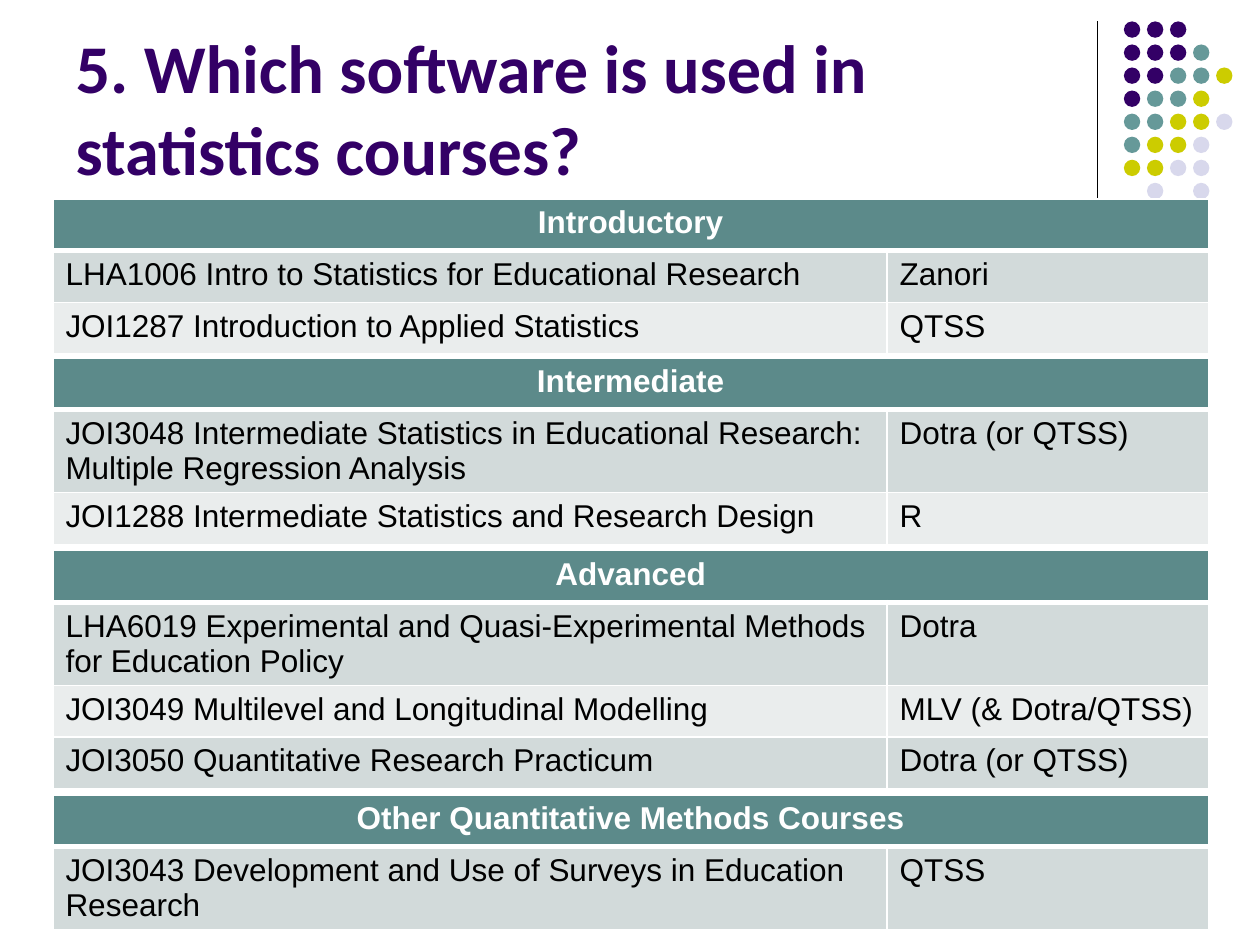
"""Build a slide listing the software used in each level of statistics course."""
from pptx import Presentation
from pptx import util as u
from pptx.dml.color import RGBColor
from pptx.enum import shapes, text
from pptx.oxml.ns import qn
from lxml import etree

COLOURS = {
    "purple": "330066", "teal": "669999", "lime": "CCCC00", "lilac": "D8D8EC",
    "header": "5C8A8A", "odd": "D2DADA", "even": "EAEDED",
    "black": "000000", "white": "FFFFFF",
}
DOT_CODES = {"P": "purple", "T": "teal", "L": "lime", "V": "lilac"}
DOT_ROWS = ["PPP", "PPPT", "PPTTL", "PTTL", "TTLLV", "TLLV", "LLVV", " V V"]
COURSE_LEVELS = [
    (1.58, 1.22, "Introductory", [
        ("LHA1006 Intro to Statistics for Educational Research", "Zanori"),
        ("JOI1287 Introduction to Applied Statistics", "QTSS"),
    ]),
    (2.84, 1.51, "Intermediate", [
        ("JOI3048 Intermediate Statistics in Educational Research: "
         "Multiple Regression Analysis", "Dotra (or QTSS)"),
        ("JOI1288 Intermediate Statistics and Research Design", "R"),
    ]),
    (4.37, 1.92, "Advanced", [
        ("LHA6019 Experimental and Quasi-Experimental Methods "
         "for Education Policy", "Dotra"),
        ("JOI3049 Multilevel and Longitudinal Modelling", "MLV (& Dotra/QTSS)"),
        ("JOI3050 Quantitative Research Practicum", "Dotra (or QTSS)"),
    ]),
    (6.31, 1.11, "Other Quantitative Methods Courses", [
        ("JOI3043 Development and Use of Surveys in Education Research", "QTSS"),
    ]),
]


def colour(name):
    return RGBColor.from_string(COLOURS[name])


class CourseSlide:
    """Hold the style and the slide being drawn."""

    def __init__(self, slide):
        self.slide = slide
        self.title_font, self.title_size = "Calibri", 39
        self.body_font, self.body_size = "Arial", 18
        self.columns, self.row_height = (6.62, 2.55), 0.41

    def style(self, paragraph, font, size, ink, bold):
        for run in paragraph.runs:
            run.font.name, run.font.size, run.font.bold = font, u.Pt(size), bold
            run.font.color.rgb = colour(ink)

    def title(self, wording, left, top, width, height):
        heading = self.slide.shapes.title
        heading.left, heading.top = u.Inches(left), u.Inches(top)
        heading.width, heading.height = u.Inches(width), u.Inches(height)
        frame = heading.text_frame
        frame.text = wording
        frame.word_wrap = True
        frame.auto_size = text.MSO_AUTO_SIZE.NONE
        frame.vertical_anchor = text.MSO_ANCHOR.BOTTOM
        paragraph = frame.paragraphs[0]
        paragraph.alignment = text.PP_ALIGN.LEFT
        paragraph.line_spacing = 1.0
        paragraph.space_before = u.Pt(0)
        self.style(paragraph, self.title_font, self.title_size, "purple", True)

    def rule(self, x, top, bottom):
        divider = self.slide.shapes.add_connector(
            shapes.MSO_CONNECTOR.STRAIGHT,
            u.Inches(x), u.Inches(top), u.Inches(x), u.Inches(bottom))
        divider.line.color.rgb = colour("black")
        divider.line.width = u.Pt(0.75)
        etree.SubElement(divider.element.spPr, qn("a:effectLst"))

    def dots(self, left, top, pitch, size):
        group = self.slide.shapes.add_group_shape()
        for row, codes in enumerate(DOT_ROWS):
            for column, code in enumerate(codes):
                if code in DOT_CODES:
                    dot = group.shapes.add_shape(
                        shapes.MSO_SHAPE.OVAL,
                        u.Inches(left + column * pitch), u.Inches(top + row * pitch),
                        u.Inches(size), u.Inches(size))
                    dot.shadow.inherit = False
                    dot.fill.solid()
                    dot.fill.fore_color.rgb = colour(DOT_CODES[code])
                    dot.line.fill.background()

    def borders(self, cell, top, bottom):
        properties = cell._tc.get_or_add_tcPr()
        for side, width in (("L", 1), ("R", 1), ("T", top), ("B", bottom)):
            edge = etree.SubElement(properties, qn(f"a:ln{side}"), w=str(u.Pt(width)))
            fill = etree.SubElement(edge, qn("a:solidFill"))
            etree.SubElement(fill, qn("a:srgbClr"), val=COLOURS["white"])

    def cell(self, cell, wording, fill, row):
        self.borders(cell, 3 if row == 1 else 1, 3 if row == 0 else 1)
        cell.fill.solid()
        cell.fill.fore_color.rgb = colour(fill)
        cell.text_frame.text = wording
        paragraph = cell.text_frame.paragraphs[0]
        is_header = row == 0
        paragraph.alignment = text.PP_ALIGN.CENTER if is_header else text.PP_ALIGN.LEFT
        self.style(paragraph, self.body_font, self.body_size,
                   "white" if is_header else "black", is_header)

    def course_table(self, left, top, height, level, courses):
        frame = self.slide.shapes.add_table(
            len(courses) + 1, 2, u.Inches(left), u.Inches(top),
            u.Inches(sum(self.columns)), u.Inches(height))
        table = frame.table
        for column, width in zip(table.columns, self.columns):
            column.width = u.Inches(width)
        for row in table.rows:
            row.height = u.Inches(self.row_height)
        frame.height = u.Inches(height)
        table.cell(0, 0).merge(table.cell(0, 1))
        for row, entries in enumerate([(level, ""), *courses]):
            fill = "header" if row == 0 else ("odd" if row % 2 else "even")
            for column, wording in enumerate(entries):
                self.cell(table.cell(row, column), wording, fill, row)


def main():
    deck = Presentation()
    deck.slide_width, deck.slide_height = u.Inches(10), u.Inches(7.5)
    page = CourseSlide(deck.slides.add_slide(deck.slide_layouts[5]))
    page.rule(8.71, 0.17, 1.83)
    page.dots(8.92, 0.17, 0.183, 0.13)
    page.title("5. Which software is used in statistics courses?", 0.5, 0.13, 8.25, 1.42)
    for top, height, level, courses in COURSE_LEVELS:
        page.course_table(0.42, top, height, level, courses)
    deck.save("out.pptx")


if __name__ == "__main__":
    main()
